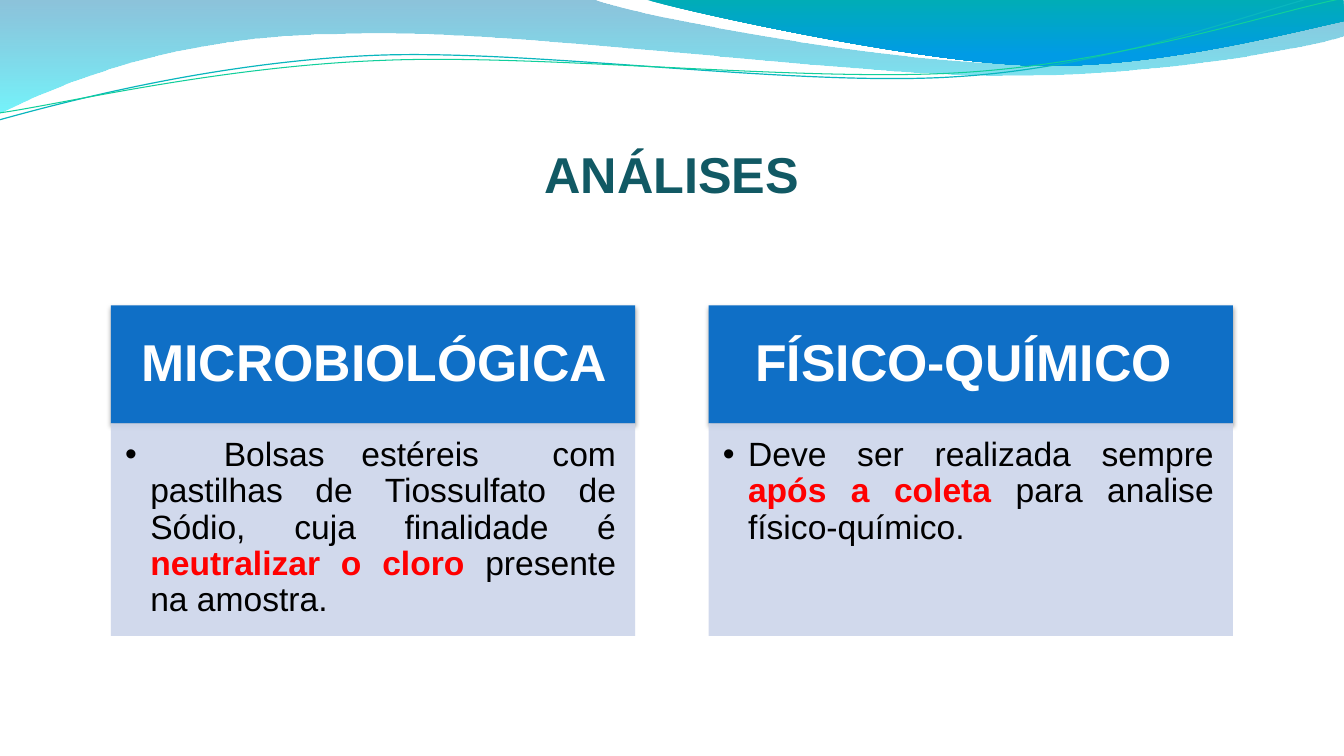
import pptx
import pptx.dml.color
import pptx.enum.shapes
import pptx.enum.text
import pptx.oxml
import pptx.oxml.ns
import pptx.util

RGB = pptx.dml.color.RGBColor
Inches, Pt = pptx.util.Inches, pptx.util.Pt
ALIGN, ANCHOR = pptx.enum.text.PP_ALIGN, pptx.enum.text.MSO_ANCHOR
qn = pptx.oxml.ns.qn
WHITE, BLACK, RED = RGB(255, 255, 255), RGB(0, 0, 0), RGB(255, 0, 0)
TITLE_TEAL = RGB(0x11, 0x59, 0x64)
HEADER_BLUE = RGB(0x0F, 0x6F, 0xC6)
BODY_LAVENDER = RGB(0xCC, 0xD5, 0xEA)
LINE_TEAL, LINE_GREEN = RGB(0x09, 0xB6, 0xBE), RGB(0x10, 0xCF, 0x9B)
PALE_TOP, PALE_BOTTOM = RGB(0, 0x79, 0xAF), RGB(0, 0xEB, 0xF8)
DEEP_TOP, DEEP_BOTTOM = RGB(0, 0xAD, 0xB6), RGB(0, 0x9B, 0xE5)

# Content: heading, then text pieces with a flag for emphasis
TITLE = "ANÁLISES"
ANALYSES = [
    ("MICROBIOLÓGICA ", [
        ("  Bolsas estéreis  com pastilhas de Tiossulfato de Sódio, cuja finalidade é ", False),
        ("neutralizar o cloro ", True),
        ("presente na amostra. ", False)]),
    ("FÍSICO-QUÍMICO ", [
        ("Deve ser realizada sempre ", False),
        ("após a coleta ", True),
        ("para analise físico-químico.", False)]),
]

# Waves in inches: a pair is a corner, six numbers are a Bézier curve
PALE_WAVE = [(0, -0.01), (5.87, -0.01), (6.34, 0.17, 8.85, 0.63, 10.11, 0.63),
             (11.38, 0.63, 12.78, 0.26, 13.33, 0.09), (13.35, 0.36),
             (13.11, 0.44, 11.6, 0.76, 9.94, 0.75), (8.29, 0.75, 5.09, 0.28, 3.43, 0.34),
             (1.72, 0.35, 0.61, 0.83, -0.01, 1.13), (0, -0.01)]
DEEP_WAVE = [(6.39, -0.01), (6.79, 0.11, 9.09, 0.62, 10.25, 0.65),
             (11.41, 0.69, 12.82, 0.32, 13.33, 0.21), (13.33, 0), (6.39, -0.01)]
FILLED_WAVES = [  # gradient stops: position, colour, opacity (percent)
    (PALE_WAVE, [(0, PALE_TOP, 45), (100, PALE_BOTTOM, 55)]),
    (DEEP_WAVE, [(0, DEEP_TOP, 100), (80, DEEP_BOTTOM, 100), (100, DEEP_BOTTOM, 100)]),
]
THIN_WAVES = [
    ([(-0.01, 1.19), (0.64, 1.01, 2.11, 0.62, 3.69, 0.55),
      (5.27, 0.48, 7.9, 0.87, 9.5, 0.76), (11.1, 0.66, 12.52, 0.08, 13.31, -0.1)],
     LINE_TEAL, 0.85),
    ([(0, 1.12), (0.63, 1.03, 2.18, 0.66, 3.78, 0.6),
      (5.37, 0.53, 7.96, 0.82, 9.55, 0.72), (11.15, 0.62, 12.55, 0.14, 13.34, -0.02)],
     LINE_GREEN, 0.75),
]

# Two centred columns, in inches
SLIDE_WIDTH, SLIDE_HEIGHT = 40 / 3, 7.5
COLUMN_WIDTH, COLUMN_GAP = 5.2, 0.73
COLUMN_STEP = COLUMN_WIDTH + COLUMN_GAP
COLUMN_LEFT = (SLIDE_WIDTH - COLUMN_STEP - COLUMN_WIDTH) / 2
HEADER_TOP, HEADER_HEIGHT, BODY_HEIGHT = 3.03, 1.17, 2.11


def assign(target, **values):
    for name, value in values.items():
        setattr(target, name, value)


def set_margins(frame, left, top, right, bottom):
    assign(frame, margin_left=Inches(left), margin_top=Inches(top),
           margin_right=Inches(right), margin_bottom=Inches(bottom))


def xml(body):
    tag, rest = body.split(" ", 1)
    return pptx.oxml.parse_xml(f"<{tag} {pptx.oxml.ns.nsdecls('a')} {rest}")


def add_wave(slide, outline, close):
    points = [(Inches(part[i]), Inches(part[i + 1]))
              for part in outline for i in range(0, len(part), 2)]
    builder = slide.shapes.build_freeform(*points[0])
    builder.add_line_segments(points[1:], close=False)
    wave = builder.convert_to_shape()
    wave.shadow.inherit = False
    # Join each three points of a curve into one Bézier segment
    track = wave._element.spPr.find(".//" + qn("a:path"))
    lines = iter(track.findall(qn("a:lnTo")))
    for part in outline[1:]:
        segment = next(lines)
        if len(part) == 6:
            segment.tag = qn("a:cubicBezTo")
            for extra in (next(lines), next(lines)):
                segment.append(extra[0])
                track.remove(extra)
    if close:
        track.append(xml("a:close />"))
    return wave


def add_panel(slide, left, top, height, colour):
    panel = slide.shapes.add_shape(
        pptx.enum.shapes.MSO_SHAPE.RECTANGLE,
        Inches(left), Inches(top), Inches(COLUMN_WIDTH), Inches(height))
    panel.shadow.inherit = False
    panel.fill.solid()
    panel.fill.fore_color.rgb = colour
    panel.line.fill.background()
    panel.text_frame.word_wrap = True
    return panel


def add_text(paragraph, text, size, colour, bold):
    run = paragraph.add_run()
    run.text = text
    assign(run.font, name="Arial", size=Pt(size), bold=bold)
    run.font.color.rgb = colour


def add_header(slide, left, heading):
    header = add_panel(slide, left, HEADER_TOP, HEADER_HEIGHT, HEADER_BLUE)
    effects = header._element.spPr.find(qn("a:effectLst"))
    effects.append(xml(
        f'a:outerShdw blurRad="{Pt(3.1)}" dist="{Pt(1.8)}" dir="5400000" rotWithShape="0">'
        '<a:srgbClr val="000000"><a:alpha val="35000"/></a:srgbClr></a:outerShdw>'))
    frame = header.text_frame
    frame.vertical_anchor = ANCHOR.MIDDLE
    set_margins(frame, 0.29, 0.16, 0.29, 0.16)
    assign(frame.paragraphs[0], alignment=ALIGN.CENTER, line_spacing=0.9)
    add_text(frame.paragraphs[0], heading, 37, WHITE, True)


def add_body(slide, left, pieces):
    body = add_panel(slide, left, HEADER_TOP + HEADER_HEIGHT, BODY_HEIGHT, BODY_LAVENDER)
    colour = body._element.spPr.find(".//" + qn("a:srgbClr"))
    colour.append(xml('a:alpha val="90000"/>'))
    frame = body.text_frame
    frame.vertical_anchor = ANCHOR.TOP
    set_margins(frame, 0.14, 0.14, 0.19, 0.21)
    paragraph = frame.paragraphs[0]
    properties = paragraph._p.get_or_add_pPr()
    properties.set("marL", str(Inches(0.25)))
    properties.set("indent", str(Inches(-0.25)))
    properties.append(xml('a:buFont typeface="Arial"/>'))
    properties.append(xml('a:buChar char="•"/>'))
    assign(paragraph, level=1, alignment=ALIGN.JUSTIFY, line_spacing=0.9)
    assign(paragraph.font, name="Arial", size=Pt(24))
    for text, strong in pieces:
        add_text(paragraph, text, 24, RED if strong else BLACK, strong)


def main():
    deck = pptx.Presentation()
    assign(deck, slide_width=Inches(SLIDE_WIDTH), slide_height=Inches(SLIDE_HEIGHT))
    slide = deck.slides.add_slide(deck.slide_layouts[5])

    # Waves along the top
    for outline, stops in FILLED_WAVES:
        wave = add_wave(slide, outline, True)
        wave.line.fill.background()
        wave.fill.gradient()
        wave.fill.gradient_angle = 270
        stop_list = wave._element.spPr.find(".//" + qn("a:gsLst"))
        stop_list[:] = [
            xml(f'a:gs pos="{position * 1000}"><a:srgbClr val="{colour}">'
                f'<a:alpha val="{opacity * 1000}"/></a:srgbClr></a:gs>')
            for position, colour, opacity in stops]
    for outline, colour, width in THIN_WAVES:
        wave = add_wave(slide, outline, False)
        wave.fill.background()
        wave.line.color.rgb = colour
        wave.line.width = Pt(width)

    # Two columns of analyses
    for column, (heading, pieces) in enumerate(ANALYSES):
        left = COLUMN_LEFT + column * COLUMN_STEP
        add_header(slide, left, heading)
        add_body(slide, left, pieces)

    # Title
    title = slide.shapes.title
    assign(title, left=Inches((SLIDE_WIDTH - 9) / 2), top=Inches(0.77),
           width=Inches(9), height=Inches(1.25))
    frame = title.text_frame
    assign(frame, vertical_anchor=ANCHOR.BOTTOM, word_wrap=True)
    set_margins(frame, 0, 0.05, 0, 0)
    frame.paragraphs[0].alignment = ALIGN.CENTER
    add_text(frame.paragraphs[0], TITLE, 36, TITLE_TEAL, True)

    deck.save("out.pptx")


if __name__ == "__main__":
    main()
